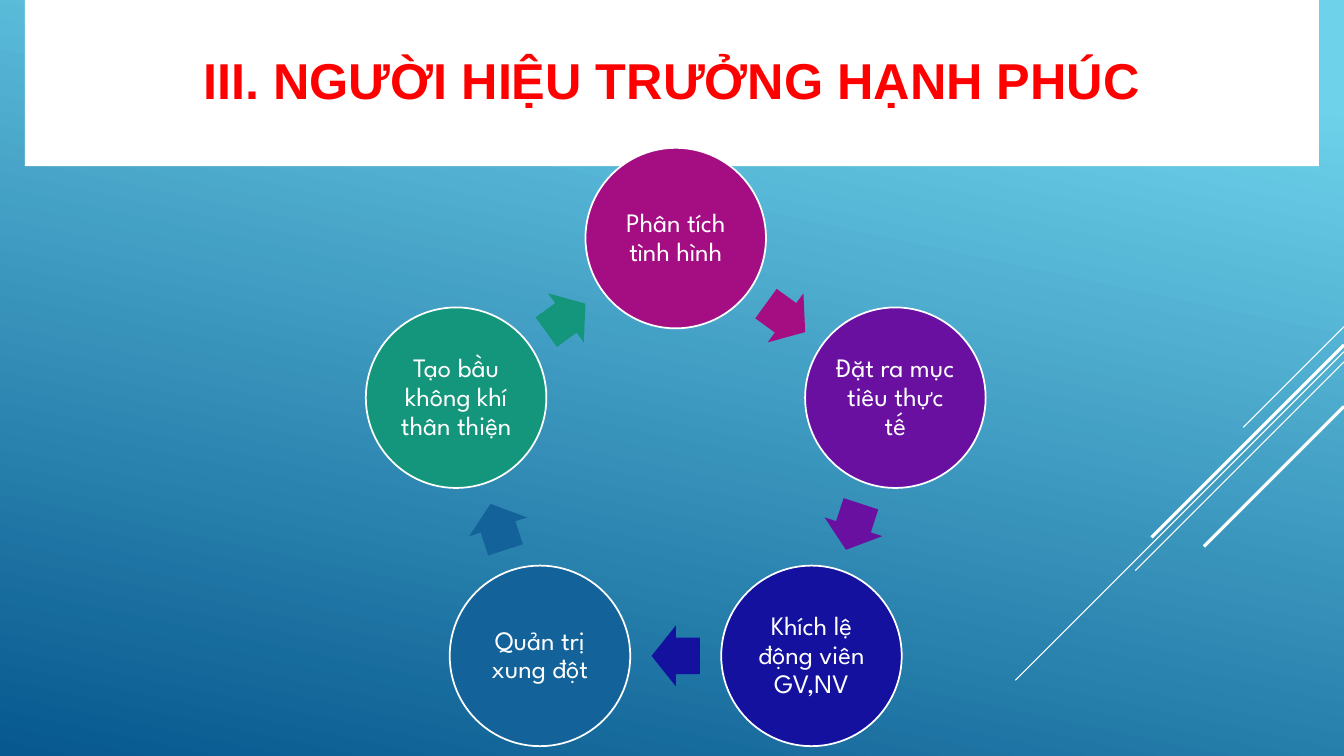
from math import cos, pi, radians, sin

from lxml.etree import SubElement
from pptx import Presentation
from pptx.dml.color import RGBColor
from pptx.enum.shapes import MSO_CONNECTOR as LINE, MSO_SHAPE as SHAPE
from pptx.enum.text import MSO_ANCHOR as ANCHOR, PP_ALIGN as ALIGN
from pptx.oxml.ns import qn
from pptx.util import Cm, Pt

WIDE, HIGH = 33.87, 19.05
HUES = {
    "sky": "6ED2EB", "sea": "06588E", "white": "FFFFFF", "red": "FF0000",
    "plum": "A50E82", "violet": "6A10A1", "navy": "13119D",
    "blue": "13639A", "green": "14967C",
}
STEPS = [
    ("Phân tích tình hình", "plum"),
    ("Đặt ra mục tiêu thực tế", "violet"),
    ("Khích lệ động viên GV,NV", "navy"),
    ("Quản trị xung đột", "blue"),
    ("Tạo bầu không khí thân thiện", "green"),
]
# Height at the right edge, run to the left, width in points
STREAKS = [
    (8.23, 2.54, 0.75), (8.86, 8.28, 0.75), (9.12, 5.26, 0.75),
    (8.69, 4.85, 2.25), (10.24, 3.53, 2.25),
]
MID_X, MID_Y, RADIUS = 17.03, 11.82, 5.82
DISC = 4.55
ARROW_W, ARROW_H = 1.22, 1.53


def color(name):
    return RGBColor.from_string(HUES[name])


def write(shape, text, font="League Spartan", size=19, hue="white",
          bold=False, inset=0.08, space=0.9):
    frame = shape.text_frame
    frame.word_wrap = True
    frame.vertical_anchor = ANCHOR.MIDDLE
    frame.margin_left = frame.margin_right = Cm(inset)
    frame.margin_top = frame.margin_bottom = Cm(inset)
    para = frame.paragraphs[0]
    para.alignment = ALIGN.CENTER
    para.line_spacing = space
    run = para.add_run()
    run.text = text
    run.font.name = font
    run.font.size = Pt(size)
    run.font.bold = bold
    run.font.color.rgb = color(hue)


def paint(slide):
    """Fill the background with a gradient."""
    fill = slide.background.fill
    fill.gradient()
    fill.gradient_angle = 258
    for stop, hue, place in zip(fill.gradient_stops, ("sky", "sea"), (0.1, 1)):
        stop.color.rgb = color(hue)
        stop.position = place


def add_title(slide, text):
    title = slide.shapes.title
    title.left, title.top = Cm(0.63), Cm(0)
    title.width, title.height = Cm(32.61), Cm(4.19)
    title.fill.solid()
    title.fill.fore_color.rgb = color("white")
    write(title, text, font="Arial", size=36, hue="red", bold=True, inset=0.2)


def add_streak(slide, top, run, width):
    """Draw a 45-degree line down from the right edge."""
    line = slide.shapes.add_connector(
        LINE.STRAIGHT, Cm(WIDE), Cm(top), Cm(WIDE - run), Cm(top + run))
    line.line.color.rgb = color("white")
    line.line.width = Pt(width)
    SubElement(line._element.spPr, qn("a:effectLst"))


def add_node(slide, kind, reach, angle, wide, high, hue):
    """Centre a shape on the ring, at degrees clockwise from the top."""
    x = MID_X + reach * sin(radians(angle))
    y = MID_Y - reach * cos(radians(angle))
    node = slide.shapes.add_shape(
        kind, Cm(x - wide / 2), Cm(y - high / 2), Cm(wide), Cm(high))
    node.shadow.inherit = False
    node.fill.solid()
    node.fill.fore_color.rgb = color(hue)
    return node


def add_disc(slide, text, angle, hue):
    disc = add_node(slide, SHAPE.OVAL, RADIUS, angle, DISC, DISC, hue)
    disc.line.color.rgb = color("white")
    disc.line.width = Pt(1.25)
    write(disc, text)


def add_arrow(slide, angle, reach, hue):
    arrow = add_node(slide, SHAPE.RIGHT_ARROW, reach, angle,
                     ARROW_W, ARROW_H, hue)
    arrow.line.fill.background()
    arrow.adjustments[0] = 0.6
    arrow.adjustments[1] = 0.5
    arrow.rotation = angle


def add_cycle(slide, steps):
    turn = 360 / len(steps)
    reach = RADIUS * cos(pi / len(steps))
    for i, (text, hue) in enumerate(steps):
        add_disc(slide, text, i * turn, hue)
        add_arrow(slide, (i + 0.5) * turn, reach, hue)


def main():
    deck = Presentation()
    deck.slide_width, deck.slide_height = Cm(WIDE), Cm(HIGH)
    slide = deck.slides.add_slide(deck.slide_layouts.get_by_name("Title Only"))
    paint(slide)
    for streak in STREAKS:
        add_streak(slide, *streak)
    add_title(slide, "III. NGƯỜI HIỆU TRƯỞNG HẠNH PHÚC")
    add_cycle(slide, STEPS)
    deck.save("out.pptx")


if __name__ == "__main__":
    main()
